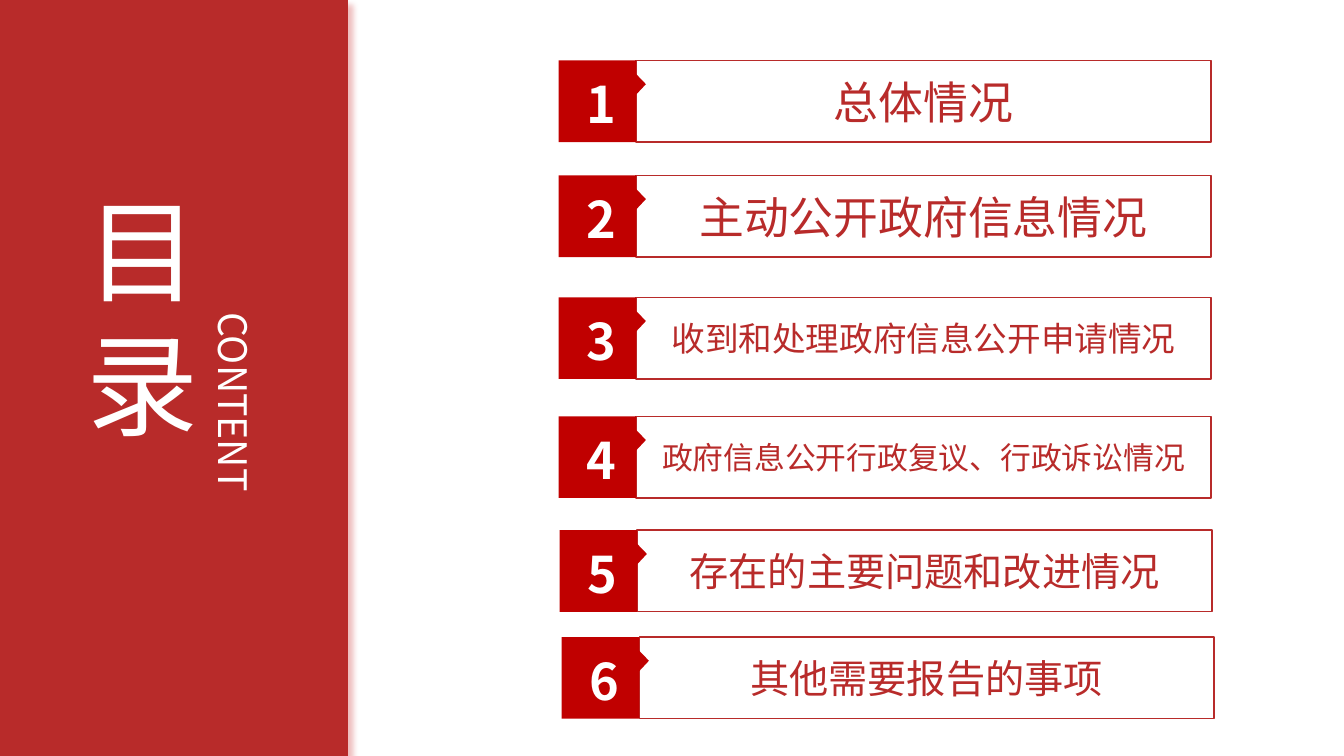
from dataclasses import dataclass

from lxml import etree
from pptx import Presentation
from pptx.dml.color import RGBColor
from pptx.enum.shapes import MSO_SHAPE as SHAPE
from pptx.enum.text import MSO_ANCHOR as ANCHOR, PP_ALIGN as ALIGN
from pptx.oxml import parse_xml
from pptx.oxml.ns import nsdecls, qn
from pptx.util import Inches, Pt


@dataclass(frozen=True)
class Theme:
    font: str = "Noto Sans CJK SC"
    panel: RGBColor = RGBColor(0xB8, 0x2B, 0x2A)
    badge: RGBColor = RGBColor(0xC0, 0x00, 0x00)
    white: RGBColor = RGBColor(0xFF, 0xFF, 0xFF)
    title_size: int = 80
    subtitle_size: int = 28
    number_size: int = 36
    leading: float = 1.2


THEME = Theme()
SLIDE_W, SLIDE_H = 13.33, 7.5
ROW_W, ROW_H = 6.47, 0.81

# Left, top, label size and label of each agenda row
AGENDA = [
    (5.54, 0.60, 32, "总体情况"),
    (5.54, 1.74, 32, "主动公开政府信息情况"),
    (5.54, 2.95, 24, "收到和处理政府信息公开申请情况"),
    (5.54, 4.13, 22, "政府信息公开行政复议、行政诉讼情况"),
    (5.55, 5.26, 28, "存在的主要问题和改进情况"),
    (5.57, 6.32, 28, "其他需要报告的事项"),
]


def inches(*lengths):
    return [Inches(length) for length in lengths]


def write(tf, lines, size, color, align, bold=False, leading=None):
    """Fill a text frame with one styled paragraph per line."""
    for i, line in enumerate(lines):
        p = tf.paragraphs[0] if i == 0 else tf.add_paragraph()
        p.alignment = align
        p.space_before = Pt(0)
        if leading:
            p.line_spacing = Pt(round(size * leading))
        r = p.add_run()
        r.text = line
        r.font.size, r.font.bold, r.font.name = Pt(size), bold, THEME.font
        r.font.color.rgb = color
        etree.SubElement(r.font._element, qn("a:ea"), typeface=THEME.font)


def add_block(slide, kind, box, fill=None, line=None):
    """Add a flat preset shape with an optional fill and outline."""
    sp = slide.shapes.add_shape(kind, *inches(*box))
    sp.shadow.inherit = False
    if fill is None:
        sp.fill.background()
    else:
        sp.fill.solid()
        sp.fill.fore_color.rgb = fill
    if line is None:
        sp.line.fill.background()
    else:
        sp.line.color.rgb = line
        sp.line.width = Pt(1)
    return sp


def add_title_panel(slide, x, y, w, h):
    # Red panel with a soft shadow, behind the title
    panel = add_block(slide, SHAPE.RECTANGLE, (x, y, w, h), fill=THEME.panel)
    panel.element.spPr.find(qn("a:effectLst")).append(parse_xml(
        f'<a:outerShdw {nsdecls("a")} blurRad="{Pt(4)}" dist="{Pt(5)}" '
        f'dir="2700000" algn="tl" rotWithShape="0"><a:srgbClr val="{THEME.badge}">'
        '<a:alpha val="25000"/></a:srgbClr></a:outerShdw>'))
    title = slide.shapes.title
    title.element.addprevious(panel.element)

    # Stacked title
    title.left, title.top, title.width, title.height = inches(
        x + 0.22 * w, y + 0.22 * h, 1.3, 2.79)
    tf = title.text_frame
    tf.word_wrap = True
    tf.vertical_anchor = ANCHOR.TOP
    tf.margin_top = Inches(0.15)
    write(tf, "目录", THEME.title_size, THEME.white, ALIGN.LEFT,
          leading=THEME.leading)

    # Vertical subtitle
    sub = slide.shapes.add_textbox(
        *inches(x + 0.56 * w, y + 0.4 * h, 0.67, 2.33))
    tf = sub.text_frame
    tf.word_wrap = True
    tf._txBody.bodyPr.set("vert", "eaVert")
    write(tf, ["CONTENT"], THEME.subtitle_size, THEME.white, ALIGN.LEFT)


def add_agenda_row(slide, x, y, w, h, number, label, size):
    badge_w = 0.77

    # Outlined label
    bar = add_block(slide, SHAPE.RECTANGLE, (x + badge_w, y, w - badge_w, h),
                    line=THEME.panel)
    bar.text_frame.word_wrap = True
    bar.text_frame.vertical_anchor = ANCHOR.MIDDLE
    write(bar.text_frame, [label], size, THEME.panel, ALIGN.CENTER)

    # Badge: a callout turned so that its tip points at the label
    shift = (h - badge_w) / 2
    badge = add_block(slide, SHAPE.RECTANGULAR_CALLOUT,
                      (x - shift, y + shift, h, badge_w), fill=THEME.badge)
    badge.rotation = 270
    badge.adjustments[0] = 0.21
    badge.adjustments[1] = 0.625

    # Number
    box = slide.shapes.add_textbox(*inches(x + 0.12, y + 0.05, 0.55, 0.71))
    tf = box.text_frame
    tf.word_wrap = True
    tf.margin_top = Inches(0.08)
    write(tf, [str(number)], THEME.number_size, THEME.white, ALIGN.RIGHT,
          bold=True, leading=THEME.leading)


def main():
    prs = Presentation()
    prs.slide_width, prs.slide_height = inches(SLIDE_W, SLIDE_H)
    slide = prs.slides.add_slide(prs.slide_layouts[5])
    add_title_panel(slide, 0, 0, 3.45, SLIDE_H)
    for number, (x, y, size, label) in enumerate(AGENDA, 1):
        add_agenda_row(slide, x, y, ROW_W, ROW_H, number, label, size)
    prs.save("out.pptx")


if __name__ == "__main__":
    main()
